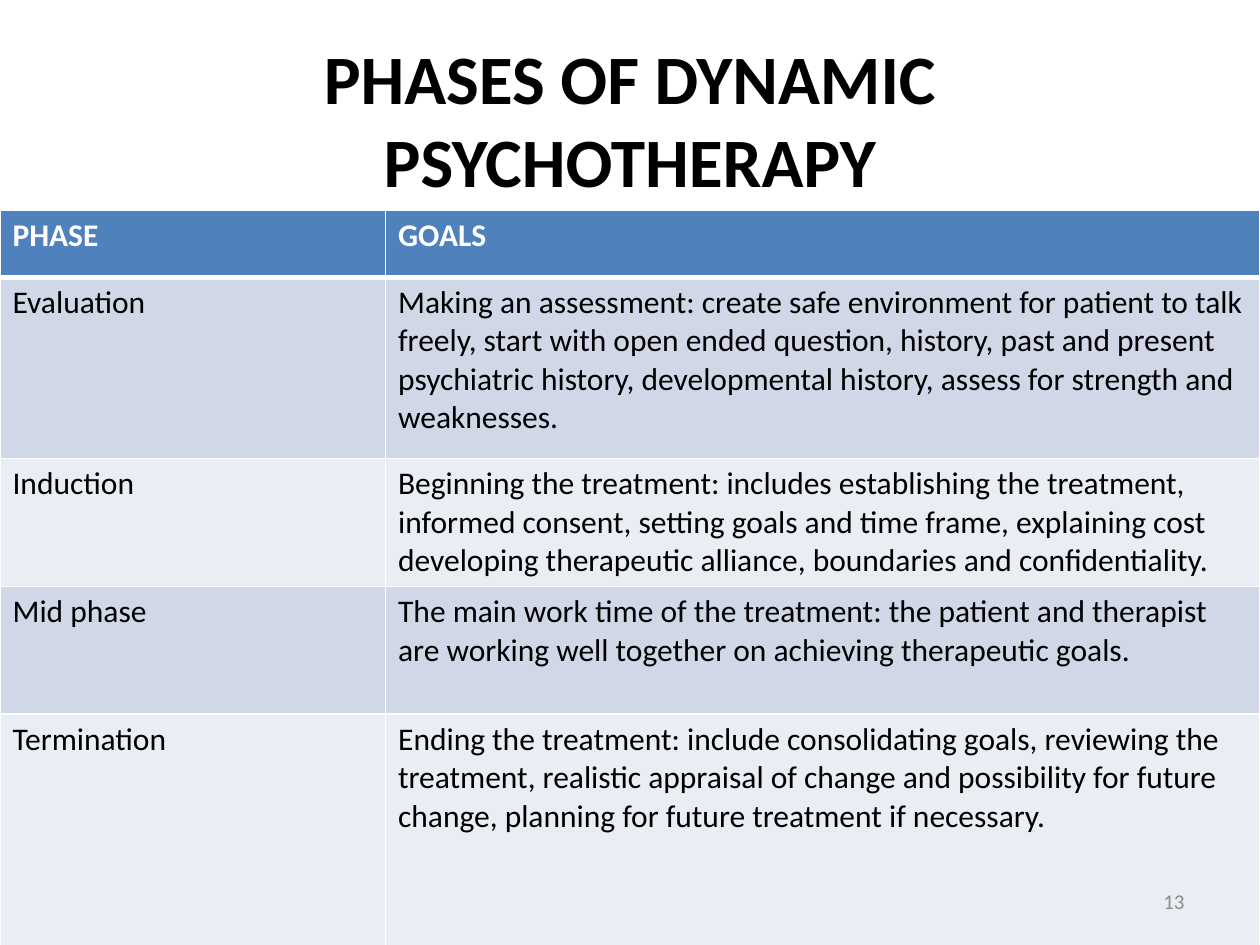
import pptx
import pptx.dml.color
import pptx.enum.text
import pptx.oxml
import pptx.oxml.ns
import pptx.util

Inches = pptx.util.Inches
ALIGN = pptx.enum.text.PP_ALIGN
ANCHOR = pptx.enum.text.MSO_ANCHOR

THEME = {
    "font": "Calibri",
    "ink": "000000", "white": "FFFFFF", "muted": "8C8C8C",
    "header": "4F81BD", "bands": ("D0D8E8", "E9EDF4"),
    "title_size": 39.6, "table_size": 18, "number_size": 12,
    "rule": 1, "header_rule": 3,
}


def write(frame, text, size, color="ink", bold=False, align=ALIGN.LEFT, anchor=ANCHOR.TOP):
    frame.word_wrap = True
    frame.auto_size = pptx.enum.text.MSO_AUTO_SIZE.NONE
    frame.vertical_anchor = anchor
    para = frame.paragraphs[0]
    para.alignment = align
    span = para.add_run()
    span.text = text
    span.font.name = THEME["font"]
    span.font.size = pptx.util.Pt(THEME[size])
    span.font.bold = bold
    span.font.color.rgb = pptx.dml.color.RGBColor.from_string(THEME[color])


def add_borders(cell, **widths):
    """Draw the four cell edges; they must come before the fill in the XML."""
    properties = cell._tc.get_or_add_tcPr()
    for index, edge in enumerate("LRTB"):
        width = pptx.util.Pt(widths.get(edge, THEME["rule"]))
        properties.insert(index, pptx.oxml.parse_xml(
            f'<a:ln{edge} {pptx.oxml.ns.nsdecls("a")} w="{width}"><a:solidFill>'
            f'<a:srgbClr val="{THEME["white"]}"/></a:solidFill></a:ln{edge}>'))


deck = pptx.Presentation()
deck.slide_width, deck.slide_height = Inches(10), Inches(7.5)
page = deck.slides.add_slide(deck.slide_layouts.get_by_name("Title Only"))

# Title
title = page.shapes.title
title.left, title.top = Inches(0.5), Inches(0.3)
title.width, title.height = Inches(9), Inches(1.28)
write(title.text_frame, "PHASES OF DYNAMIC PSYCHOTHERAPY", "title_size",
      bold=True, align=ALIGN.CENTER, anchor=ANCHOR.MIDDLE)

# Table of phases: row height, phase, goals
rows = [
    (0.53, "PHASE", "GOALS"),
    (1.44, "Evaluation",
     "Making an assessment: create safe environment for patient to talk freely, "
     "start with open ended question, history, past and present psychiatric history, "
     "developmental history, assess for strength and weaknesses."),
    (1.01, "Induction",
     "Beginning the treatment: includes establishing the treatment, informed consent, "
     "setting goals and time frame, explaining cost developing therapeutic alliance, "
     "boundaries and confidentiality."),
    (1.01, "Mid phase",
     "The main work time of the treatment: the patient and therapist are working well "
     "together on achieving therapeutic goals."),
    (1.85, "Termination",
     "Ending the treatment: include consolidating goals, reviewing the treatment, "
     "realistic appraisal of change and possibility for future change, planning for "
     "future treatment if necessary."),
]
table = page.shapes.add_table(len(rows), 2, Inches(0), Inches(1.67),
                              Inches(10), Inches(5.84)).table
for column, width in zip(table.columns, (3.06, 6.94)):
    column.width = Inches(width)

for number, (height, *texts) in enumerate(rows):
    table.rows[number].height = Inches(height)
    is_header = number == 0
    fill = THEME["header"] if is_header else THEME["bands"][(number - 1) % 2]
    # The heavy rule lies between the header and the first phase
    heavy = {0: {"B": THEME["header_rule"]}, 1: {"T": THEME["header_rule"]}}.get(number, {})
    for cell, text in zip(table.rows[number].cells, texts):
        write(cell.text_frame, text, "table_size",
              color="white" if is_header else "ink", bold=is_header)
        cell.fill.solid()
        cell.fill.fore_color.rgb = pptx.dml.color.RGBColor.from_string(fill)
        add_borders(cell, **heavy)

# Slide number
box = page.shapes.add_textbox(Inches(7.17), Inches(6.95), Inches(2.33), Inches(0.4))
write(box.text_frame, "13", "number_size", color="muted",
      align=ALIGN.RIGHT, anchor=ANCHOR.MIDDLE)

deck.save("out.pptx")
